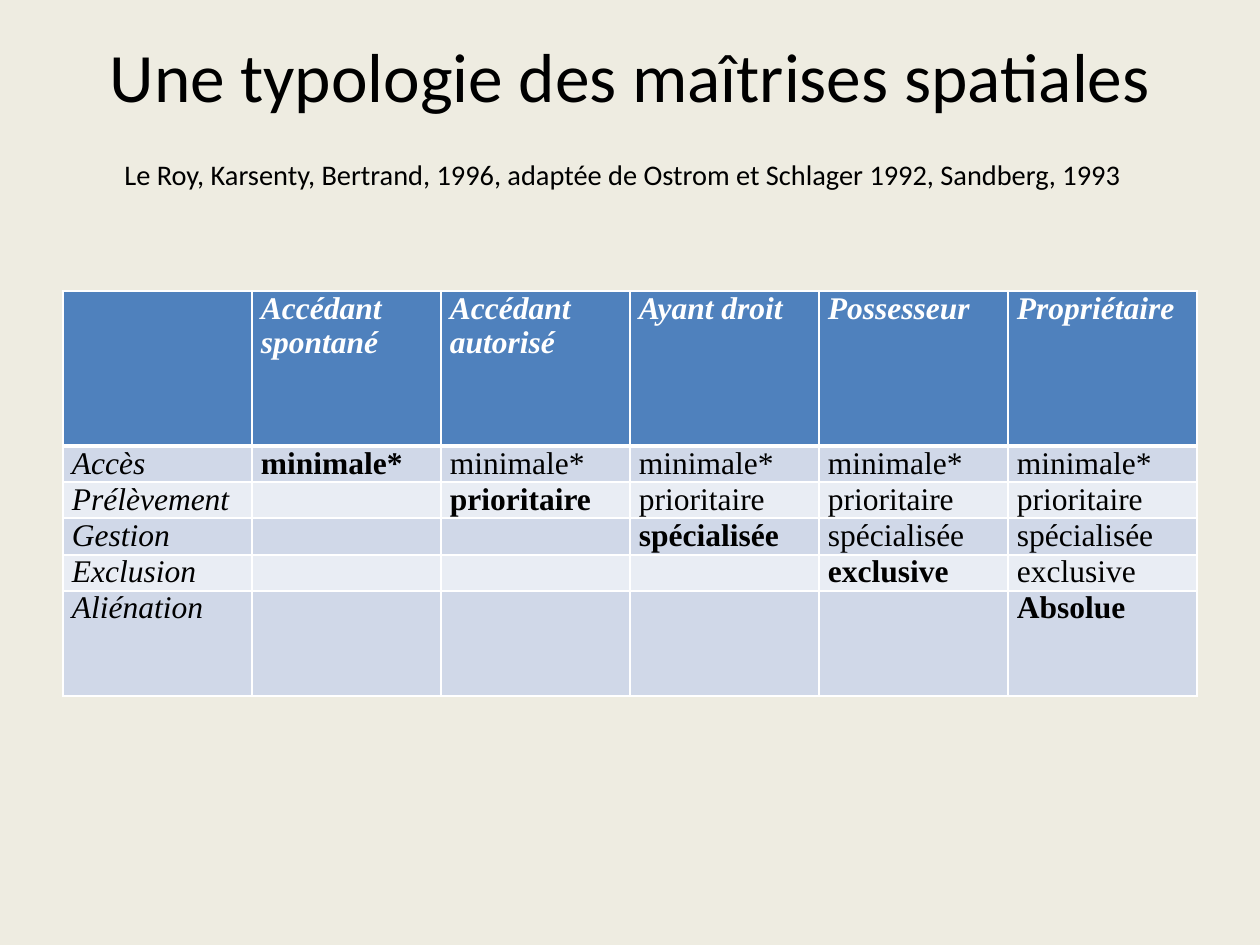
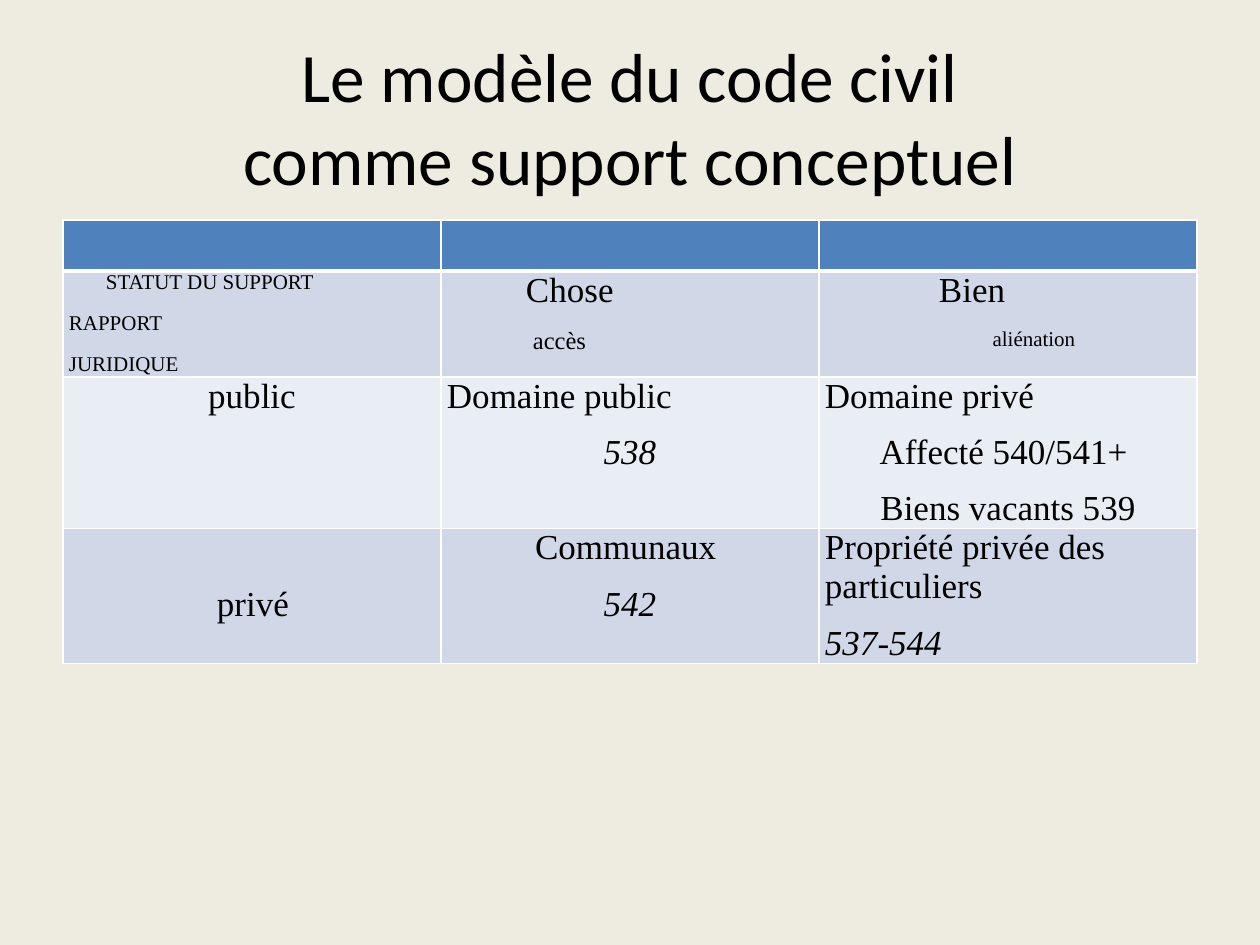
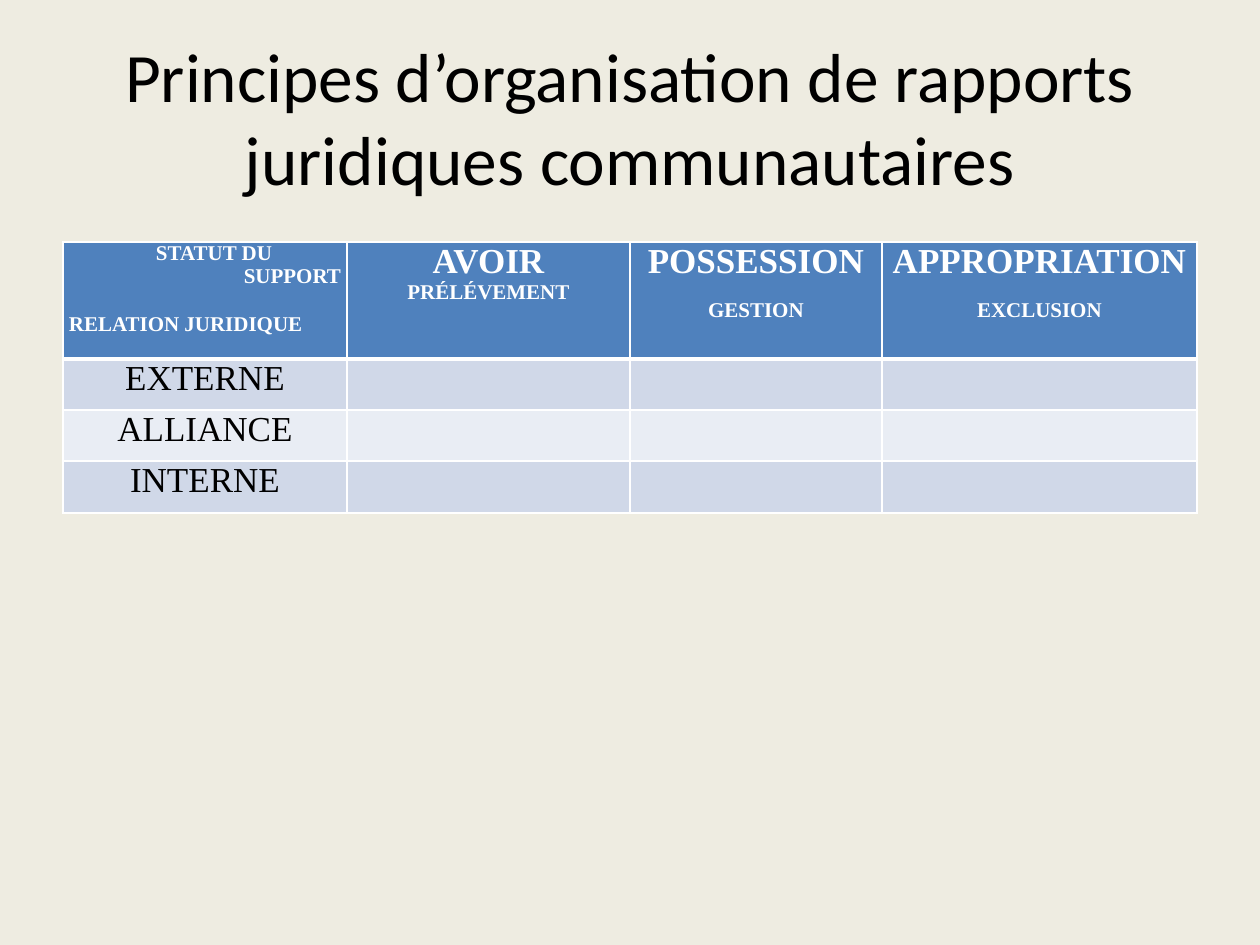
"""Build three slides on land tenure: a titled table on each."""
from dataclasses import dataclass

from lxml.etree import SubElement
from pptx import Presentation
from pptx.dml.color import RGBColor as Rgb
from pptx.enum.text import MSO_ANCHOR as Anchor
from pptx.enum.text import MSO_AUTO_SIZE as AutoSize
from pptx.enum.text import PP_ALIGN as Align
from pptx.oxml.ns import qn
from pptx.util import Pt


@dataclass(frozen=True)
class Theme:
    ground: str = "EEECE1"
    header: str = "4F81BD"
    bands: tuple = ("D0D8E8", "E9EDF4")
    ink: str = "000000"
    white: str = "FFFFFF"
    title_font: str = "Calibri"
    table_font: str = "Times New Roman"
    title: float = 39.6
    source: float = 16.2
    large: int = 20
    body: int = 18
    medium: int = 14
    small: int = 12
    gap: int = 10
    rule: int = 1
    header_rule: int = 3


THEME = Theme()
SMALL, MEDIUM, BODY, LARGE = THEME.small, THEME.medium, THEME.body, THEME.large
PX = 914400 / 126
PAGE_SIZE = (1260, 945)
TITLE_BOX = (63, 38, 1134, 157)
TITLE_ONLY = 5


@dataclass(frozen=True)
class Line:
    text: str
    size: int = LARGE
    align: Align = Align.LEFT
    indent: int = 0
    before: int = 0
    after: int = THEME.gap
    bold: bool = False
    italic: bool = False


def centred(text, size=LARGE, **style):
    return Line(text, size, Align.CENTER, **style)


HOLDERS = [["Accédant", "spontané"], ["Accédant", "autorisé"],
           ["Ayant droit"], ["Possesseur"], ["Propriétaire"]]
RIGHTS = [("Accès", "minimale*"), ("Prélèvement", "prioritaire"),
          ("Gestion", "spécialisée"), ("Exclusion", "exclusive"),
          ("Aliénation", "Absolue")]


def mastery_rows():
    header = [[]] + [[Line(word, BODY, after=0, bold=True, italic=True) for word in words]
                     for words in HOLDERS]
    rows = [header]
    for first, (right, level) in enumerate(RIGHTS):
        cells = [[Line(level, BODY, after=0, bold=column == first)] if column >= first else []
                 for column in range(len(HOLDERS))]
        rows.append([[Line(right, BODY, after=0, italic=True)]] + cells)
    return rows


CIVIL_CODE_ROWS = [
    [[], [], []],
    [[Line("STATUT DU SUPPORT", SMALL, indent=37), Line("RAPPORT", SMALL), Line("JURIDIQUE", SMALL)],
     [Line("Chose", indent=79), Line("accès", MEDIUM, indent=86)],
     [Line("Bien", indent=114), centred("aliénation", SMALL, indent=52)]],
    [[centred("public")],
     [Line("Domaine public"), centred("538", italic=True)],
     [Line("Domaine privé"), centred("Affecté 540/541+ "), centred("Biens vacants 539")]],
    [[Line("privé", indent=148)],
     [centred("Communaux "), centred("542", italic=True)],
     [Line("Propriété privée des particuliers"), Line("537-544", italic=True)]],
]

COMMUNITY_ROWS = [
    [[Line("STATUT DU", SMALL, indent=87, after=0, bold=True),
      Line("SUPPORT", SMALL, Align.RIGHT, after=0, bold=True),
      Line("RELATION JURIDIQUE", SMALL, before=14, bold=True)],
     [centred("AVOIR", after=0, bold=True), centred("PRÉLÉVEMENT", SMALL, bold=True)],
     [centred("POSSESSION", bold=True), centred("GESTION", SMALL, bold=True)],
     [centred("APPROPRIATION", bold=True), centred("EXCLUSION", SMALL, bold=True)]],
] + [[[centred(relation)], [], [], []] for relation in ("EXTERNE", "ALLIANCE", "INTERNE")]

PAGES = [
    dict(title=[[("Une typologie des maîtrises spatiales", THEME.title)],
                [("Le Roy, Karsenty, Bertrand, 1996, adaptée de Ostrom et Schlager 1992, "
                  "Sandberg, 1993", THEME.source), (" ", THEME.title)]],
         rows=mastery_rows(), top=291, inset=9, columns=[189] * 6,
         heights=[155, 36, 36, 37, 36, 105], drops={}),
    dict(title=[[("Le modèle du code civil", THEME.title)],
                [("comme support conceptuel", THEME.title)]],
         rows=CIVIL_CODE_ROWS, top=220, inset=6, columns=[378] * 3,
         heights=[51, 106, 151, 135], drops={(3, 0): 57}),
    dict(title=[[("Principes d’organisation de rapports juridiques communautaires", THEME.title)]],
         rows=COMMUNITY_ROWS, top=242, inset=6, columns=[284, 283, 252, 315],
         heights=[117, 51, 51, 52], drops={}),
]


def px(length):
    return round(length * PX)


def colour(code):
    return Rgb.from_string(code)


def add_span(para, text, size, font, ink):
    span = para.add_run()
    span.text = text
    span.font.size = Pt(size)
    span.font.name = font
    span.font.color.rgb = colour(ink)
    return span


def fill_title(box, lines):
    box.left, box.top, box.width, box.height = map(px, TITLE_BOX)
    frame = box.text_frame
    frame.auto_size = AutoSize.NONE
    frame.word_wrap = True
    frame.vertical_anchor = Anchor.MIDDLE
    para = frame.paragraphs[0]
    para.alignment = Align.CENTER
    for number, spans in enumerate(lines):
        if number:
            para.add_line_break()
        for text, size in spans:
            add_span(para, text, size, THEME.title_font, THEME.ink)


def write_lines(frame, lines, ink):
    for number, line in enumerate(lines):
        para = frame.add_paragraph() if number else frame.paragraphs[0]
        para.alignment = line.align
        para.space_before = Pt(line.before)
        para.space_after = Pt(line.after)
        if line.indent:
            para._p.get_or_add_pPr().set("marL", str(px(line.indent)))
        span = add_span(para, line.text, line.size, THEME.table_font, ink)
        span.font.bold = line.bold
        span.font.italic = line.italic
    if not lines:
        end = SubElement(frame.paragraphs[0]._p, qn("a:endParaRPr"))
        end.set("sz", str(SMALL * 100))


def draw_borders(cell, weights):
    properties = cell._tc.get_or_add_tcPr()
    for position, (side, weight) in enumerate(weights.items()):
        border = properties.makeelement(qn(f"a:ln{side}"), {"w": str(Pt(weight))})
        paint = SubElement(border, qn("a:solidFill"))
        SubElement(paint, qn("a:srgbClr")).set("val", THEME.white)
        properties.insert(position, border)


def add_grid(page, rows, top, inset, columns, heights, drops):
    shape = page.shapes.add_table(len(rows), len(columns), px(TITLE_BOX[0]), px(top),
                                  px(sum(columns)), px(sum(heights)))
    grid = shape.table
    for column, width in zip(grid.columns, columns):
        column.width = px(width)
    for row, height in zip(grid.rows, heights):
        row.height = px(height)
    for r, cells in enumerate(rows):
        for c, lines in enumerate(cells):
            cell = grid.cell(r, c)
            cell.margin_left = cell.margin_right = px(inset)
            cell.margin_top = px(drops.get((r, c), 0))
            cell.margin_bottom = 0
            cell.fill.solid()
            cell.fill.fore_color.rgb = colour(THEME.bands[(r - 1) % 2] if r else THEME.header)
            draw_borders(cell, {"L": THEME.rule, "R": THEME.rule,
                                "T": THEME.header_rule if r == 1 else THEME.rule,
                                "B": THEME.rule if r else THEME.header_rule})
            write_lines(cell.text_frame, lines, THEME.ink if r else THEME.white)


def main():
    deck = Presentation()
    deck.slide_width, deck.slide_height = map(px, PAGE_SIZE)
    ground = deck.slide_master.background.fill
    ground.solid()
    ground.fore_color.rgb = colour(THEME.ground)
    for content in PAGES:
        page = deck.slides.add_slide(deck.slide_layouts[TITLE_ONLY])
        fill_title(page.shapes.title, content["title"])
        add_grid(page, **{key: value for key, value in content.items() if key != "title"})
    deck.save("out.pptx")


if __name__ == "__main__":
    main()
